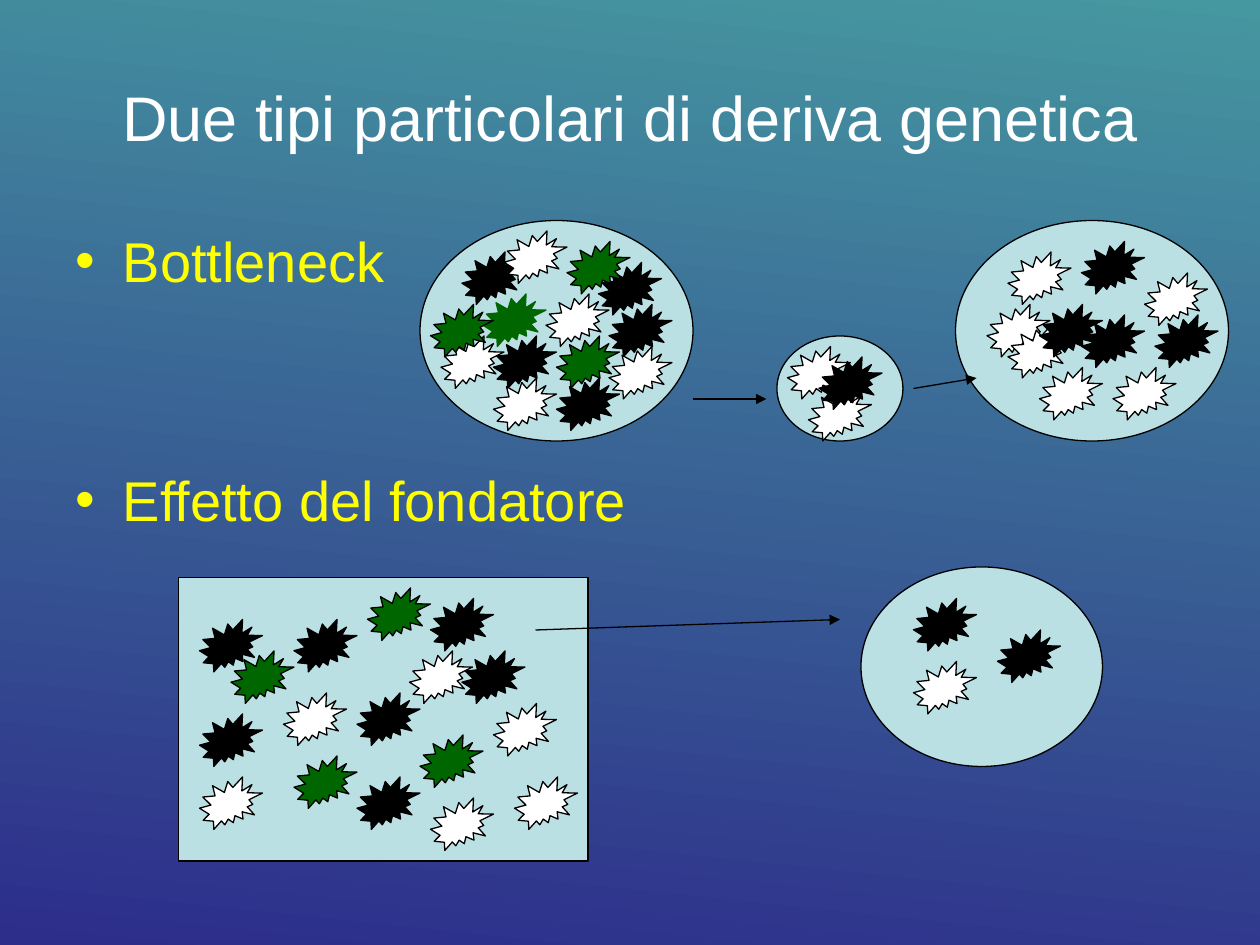
from lxml.etree import SubElement
from pptx import Presentation
from pptx.dml.color import RGBColor
from pptx.enum.shapes import MSO_CONNECTOR as Connector, MSO_SHAPE as Shape
from pptx.enum.text import MSO_ANCHOR as Anchor, PP_ALIGN as Align
from pptx.oxml.ns import qn
from pptx.util import Cm, Pt

CELL = 2.54 / 12
BLACK, WHITE, GREEN = "000000", "FFFFFF", "006600"
YELLOW, HABITAT = "FFFF00", "BBE0E3"


def grid(*cells):
    """Turn grid cells, twelve to the inch, into lengths."""
    return [Cm(cell * CELL) for cell in cells]


def rgb(value):
    """Turn a hex string into a colour."""
    return RGBColor.from_string(value)


class GeneticsSlide:
    """Hold the style and the current slide."""

    font = "Arial"
    line_width = Pt(0.75)
    allele_size = (6, 5)

    def __init__(self, deck):
        """Add a title-and-content slide."""
        self.slide = deck.slides.add_slide(deck.slide_layouts[1])

    def background(self, top, bottom, angle):
        """Fill the background with a two-colour gradient."""
        fill = self.slide.background.fill
        fill.gradient()
        fill.gradient_angle = angle
        for stop, colour in zip(fill.gradient_stops, (top, bottom)):
            stop.color.rgb = rgb(colour)

    def place(self, holder, box):
        """Move a placeholder to its box."""
        holder.left, holder.top, holder.width, holder.height = grid(*box)
        return holder.text_frame

    def format(self, paragraph, size, colour):
        """Set the font of a paragraph."""
        paragraph.font.name = self.font
        paragraph.font.size = Pt(size)
        paragraph.font.color.rgb = rgb(colour)

    def title(self, wording, box):
        """Write the centred title."""
        frame = self.place(self.slide.shapes.title, box)
        frame.text = wording
        frame.vertical_anchor = Anchor.MIDDLE
        heading = frame.paragraphs[0]
        heading.alignment = Align.CENTER
        self.format(heading, 36, WHITE)

    def bullets(self, items, box, gap):
        """Write the list with a wide gap between its items."""
        frame = self.place(self.slide.placeholders[1], box)
        frame.text = "\n".join(items)
        for item in frame.paragraphs:
            self.format(item, 32, YELLOW)
        for item in frame.paragraphs[1:]:
            item.space_before = Pt(gap)

    def figure(self, kind, box, fill, outline=BLACK):
        """Draw an outlined preset shape."""
        figure = self.slide.shapes.add_shape(kind, *grid(*box))
        figure.shadow.inherit = False
        figure.fill.solid()
        figure.fill.fore_color.rgb = rgb(fill)
        figure.line.color.rgb = rgb(outline)
        figure.line.width = self.line_width

    def population(self, kind, box, alleles):
        """Draw a habitat and the alleles living in it."""
        self.figure(kind, box, HABITAT)
        for x, y, fill, *outline in alleles:
            self.figure(Shape.EXPLOSION2, (x, y, *self.allele_size), fill, *outline)

    def arrow(self, start, end):
        """Draw a straight arrow."""
        arrow = self.slide.shapes.add_connector(Connector.STRAIGHT, *grid(*start, *end))
        arrow.line.color.rgb = rgb(BLACK)
        arrow.line.width = self.line_width
        SubElement(arrow.line._get_or_add_ln(), qn("a:tailEnd"), type="triangle")
        SubElement(arrow._element.spPr, qn("a:effectLst"))


POPULATIONS = [
    (Shape.RECTANGLE, (17, 55, 39, 27), [
        (19, 59, BLACK), (19, 68, BLACK), (28, 59, BLACK), (34, 66, BLACK),
        (40, 70, GREEN), (41, 57, BLACK), (44, 62, BLACK), (34, 74, BLACK),
        (19, 74, WHITE), (28, 72, GREEN), (41, 76, WHITE), (27, 66, WHITE),
        (47, 67, WHITE), (49, 74, WHITE), (22, 62, GREEN), (39, 62, WHITE),
        (35, 56, GREEN)]),
    (Shape.OVAL, (82, 54, 23, 19), [
        (87, 57, BLACK), (95, 60, BLACK), (87, 63, WHITE)]),
    (Shape.OVAL, (40, 21, 26, 21), [
        (46, 28, GREEN, GREEN), (57, 25, BLACK), (44, 24, BLACK), (47, 32, BLACK),
        (53, 36, BLACK), (54, 23, GREEN), (58, 29, BLACK), (47, 36, WHITE),
        (42, 32, WHITE), (58, 33, WHITE), (52, 28, WHITE), (48, 22, WHITE),
        (41, 29, GREEN), (53, 32, GREEN)]),
    (Shape.OVAL, (74, 32, 12, 10), [
        (75, 33, WHITE), (77, 37, WHITE), (78, 34, BLACK)]),
    (Shape.OVAL, (91, 21, 26, 21), [
        (96, 24, WHITE), (94, 29, WHITE), (103, 23, BLACK), (106, 35, WHITE),
        (96, 31, WHITE), (99, 29, BLACK), (109, 26, WHITE), (99, 35, WHITE),
        (110, 30, BLACK), (103, 30, BLACK)]),
]
MIGRATIONS = [((51, 60), (80, 59)), ((66, 38), (73, 38)), ((87, 37), (93, 36))]


def main():
    """Build and save the slide."""
    deck = Presentation()
    deck.slide_width, deck.slide_height = Cm(25.4), Cm(19.05)
    drift = GeneticsSlide(deck)
    drift.background("4597A0", "2D2D8A", 264)
    drift.title("Due tipi particolari di deriva genetica", (0, 3.6, 120, 15))
    drift.bullets(["Bottleneck", "Effetto del fondatore"], (6, 21, 70, 37), 98)
    for habitat in POPULATIONS:
        drift.population(*habitat)
    for migration in MIGRATIONS:
        drift.arrow(*migration)
    deck.save("out.pptx")


if __name__ == "__main__":
    main()
